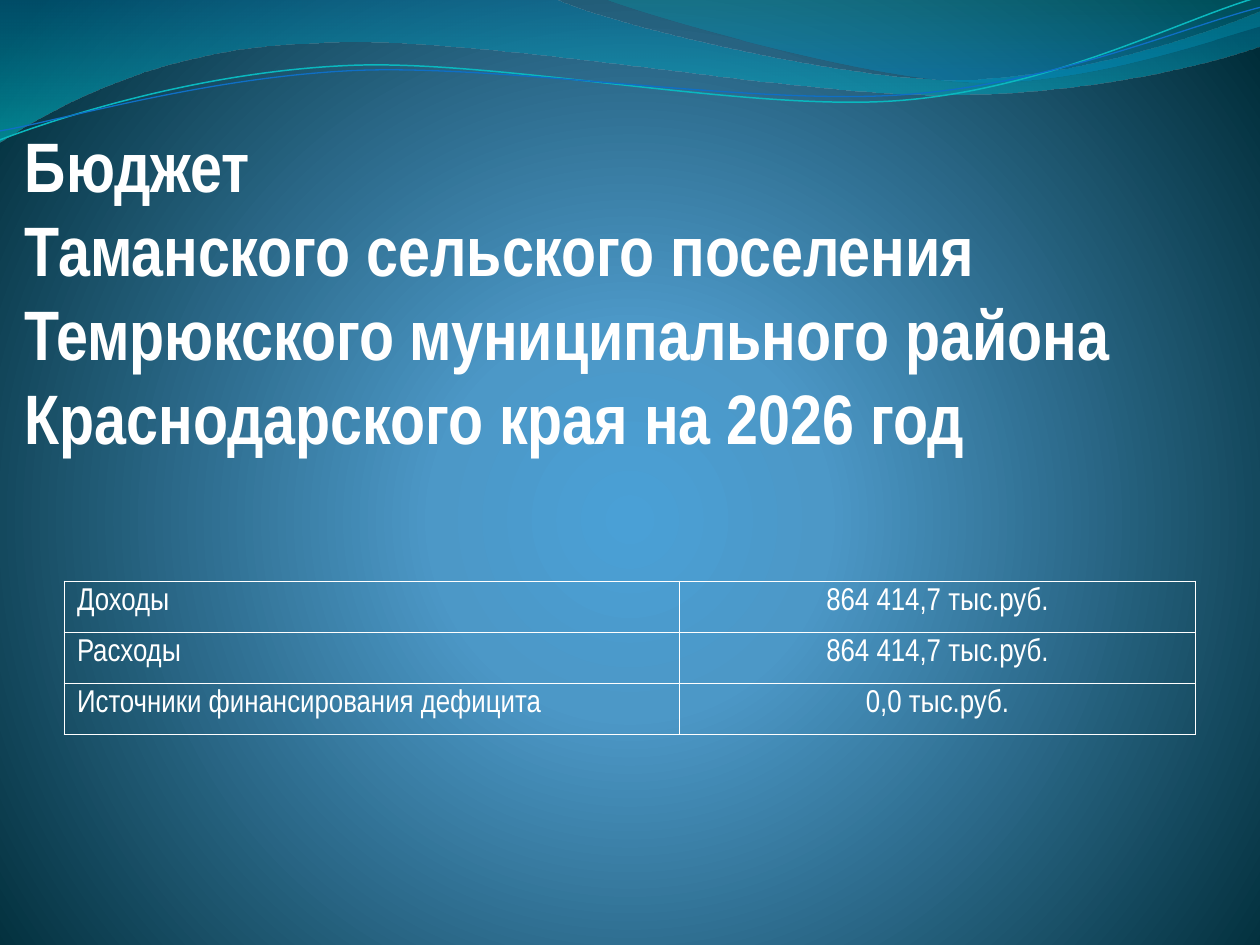
from dataclasses import dataclass

from lxml import etree
from pptx import Presentation
from pptx.dml.color import RGBColor as RGB
from pptx.enum.text import MSO_ANCHOR as ANCHOR, MSO_AUTO_SIZE as AUTO, PP_ALIGN as ALIGN
from pptx.oxml import parse_xml
from pptx.oxml.ns import nsdecls, qn
from pptx.util import Cm, Pt


@dataclass(frozen=True)
class Theme:
    font: str = "Arial Narrow"
    white: str = "FFFFFF"
    teal: str = "0AB8BF"
    blue: str = "0F6FC6"
    title: int = 40
    body: int = 18
    # Gradient stops: position %, colour, opacity %
    backdrop: tuple = ((0, "4AA0D6", 100), (25, "4C98C7", 100), (100, "002C38", 100))
    long_wave: tuple = ((0, "0074A1", 45), (100, "00C6CF", 55))
    short_wave: tuple = ((0, "00A1A9", 30), (80, "008BBF", 45))


THEME = Theme()
DOWN = '<a:lin ang="5400000" scaled="1"/>'
RADIAL = '<a:path path="circle"><a:fillToRect l="10000" t="110000" r="10000" b="100000"/></a:path>'

# Outlines in cm: a pair is a straight step, six numbers are a Bezier step
LONG_WAVE = [
    (0, 0), (11.18, -0.03),
    (12.09, 0.43, 16.87, 1.6, 19.25, 1.6), (21.67, 1.6, 24.33, 0.66, 25.4, 0.23),
    (25.43, 0.91),
    (24.97, 1.12, 22.1, 1.93, 18.95, 1.91), (15.8, 1.91, 9.7, 0.71, 6.53, 0.86),
    (3.28, 0.91, 1.17, 2.11, -0.03, 2.87), (0, 0),
]
SHORT_WAVE = [
    (12.17, -0.03),
    (12.93, 0.28, 17.32, 1.57, 19.53, 1.65), (21.74, 1.75, 24.41, 0.81, 25.4, 0.53),
    (25.4, 0), (12.17, -0.03),
]
TEAL_LINE = [
    (0, 2.82), (1.22, 2.36, 4.01, 1.45, 7.04, 1.32),
    (10.03, 1.19, 15.06, 2.26, 18.11, 2.03), (21.16, 1.8, 23.83, 0.38, 25.35, -0.05),
]
BLUE_LINE = [
    (0, 2.64), (1.19, 2.44, 4.17, 1.55, 7.19, 1.42),
    (10.24, 1.3, 15.16, 2.13, 18.21, 1.91), (21.23, 1.7, 23.9, 0.53, 25.4, 0.15),
]

TITLE = ("Бюджет \vТаманского сельского поселения Темрюкского муниципального района "
         "Краснодарского края на 2026 год")
BUDGET = [
    ("Доходы", "864 414,7 тыс.руб."),
    ("Расходы", "864 414,7 тыс.руб."),
    ("Источники финансирования дефицита", "0,0 тыс.руб."),
]


def set_gradient(fill, parent, stops, direction):
    """Fill with stops that may be translucent; parent holds the fill element."""
    fill.gradient()
    gs = "".join(
        f'<a:gs pos="{pos * 1000}"><a:srgbClr val="{color}">'
        f'<a:alpha val="{alpha * 1000}"/></a:srgbClr></a:gs>'
        for pos, color, alpha in stops)
    parent.replace(parent.find(qn("a:gradFill")), parse_xml(
        f'<a:gradFill {nsdecls("a")} rotWithShape="1"><a:gsLst>{gs}</a:gsLst>{direction}</a:gradFill>'))


def add_outline(s, steps, close):
    """Build a freeform, then merge the three points of each Bezier step into a curve."""
    start, *rest = [(Cm(x), Cm(y)) for step in steps for x, y in zip(step[::2], step[1::2])]
    builder = s.shapes.build_freeform(*start)
    builder.add_line_segments(rest, close=close)
    sp = builder.convert_to_shape()
    sp.shadow.inherit = False
    segments = iter(list(sp._element.iter(qn("a:lnTo"))))
    for step in steps[1:]:
        first = next(segments)
        if len(step) == 6:
            first.addprevious(curve := etree.Element(qn("a:cubicBezTo")))
            for segment in (first, next(segments), next(segments)):
                curve.append(segment[0])
                segment.getparent().remove(segment)
    return sp


def add_wave(s, steps, stops):
    sp = add_outline(s, steps, close=True)
    sp.line.fill.background()
    set_gradient(sp.fill, sp._element.spPr, stops, DOWN)


def add_wave_line(s, steps, color, width):
    sp = add_outline(s, steps, close=False)
    sp.fill.background()
    sp.line.color.rgb = RGB.from_string(color)
    sp.line.width = Pt(width)


def format_font(font, size, bold=False):
    font.name = THEME.font
    font.size = Pt(size)
    font.bold = bold
    font.color.rgb = RGB.from_string(THEME.white)


def set_title(s):
    sp = s.shapes.title
    s.shapes._spTree.append(sp._element)  # in front of the waves
    sp.left, sp.top, sp.width, sp.height = Cm(0.5), Cm(1.52), Cm(24.2), Cm(7.73)
    tf = sp.text_frame
    tf.text = TITLE
    tf.word_wrap = True
    tf.auto_size = AUTO.NONE
    tf.vertical_anchor = ANCHOR.BOTTOM
    tf.margin_left = tf.margin_top = tf.margin_bottom = 0
    tf.margin_right = Cm(0.05)
    p = tf.paragraphs[0]
    p.alignment = ALIGN.LEFT
    for r in p.runs:
        format_font(r.font, THEME.title, bold=True)


def set_borders(cell):
    tc_pr = cell._tc.get_or_add_tcPr()
    for side in ("a:lnL", "a:lnR", "a:lnT", "a:lnB"):
        ln = etree.SubElement(tc_pr, qn(side), w=str(Pt(1)))
        fill = etree.SubElement(ln, qn("a:solidFill"))
        etree.SubElement(fill, qn("a:srgbClr"), val=THEME.white)


def add_budget_table(s):
    widths = Cm(12.4), Cm(10.4)
    row_height = Cm(1.03)
    table = s.shapes.add_table(len(BUDGET), len(widths), Cm(1.3), Cm(11.72),
                               sum(widths), row_height * len(BUDGET)).table
    table.first_row = table.horz_banding = False
    for column, width in zip(table.columns, widths):
        column.width = width
    for i, row in enumerate(BUDGET):
        for j, text in enumerate(row):
            cell = table.cell(i, j)
            set_borders(cell)
            cell.fill.background()
            cell.text_frame.text = text
            p = cell.text_frame.paragraphs[0]
            p.alignment = ALIGN.CENTER if j else ALIGN.LEFT
            format_font(p.runs[0].font, THEME.body)


def main():
    prs = Presentation()
    prs.slide_width, prs.slide_height = Cm(25.4), Cm(19.05)
    s = prs.slides.add_slide(prs.slide_layouts[5])
    fill = s.background.fill
    set_gradient(fill, s._element.find(".//" + qn("p:bgPr")), THEME.backdrop, RADIAL)
    add_wave(s, LONG_WAVE, THEME.long_wave)
    add_wave(s, SHORT_WAVE, THEME.short_wave)
    add_wave_line(s, TEAL_LINE, THEME.teal, 0.85)
    add_wave_line(s, BLUE_LINE, THEME.blue, 0.75)
    set_title(s)
    add_budget_table(s)
    prs.save("out.pptx")


if __name__ == "__main__":
    main()
